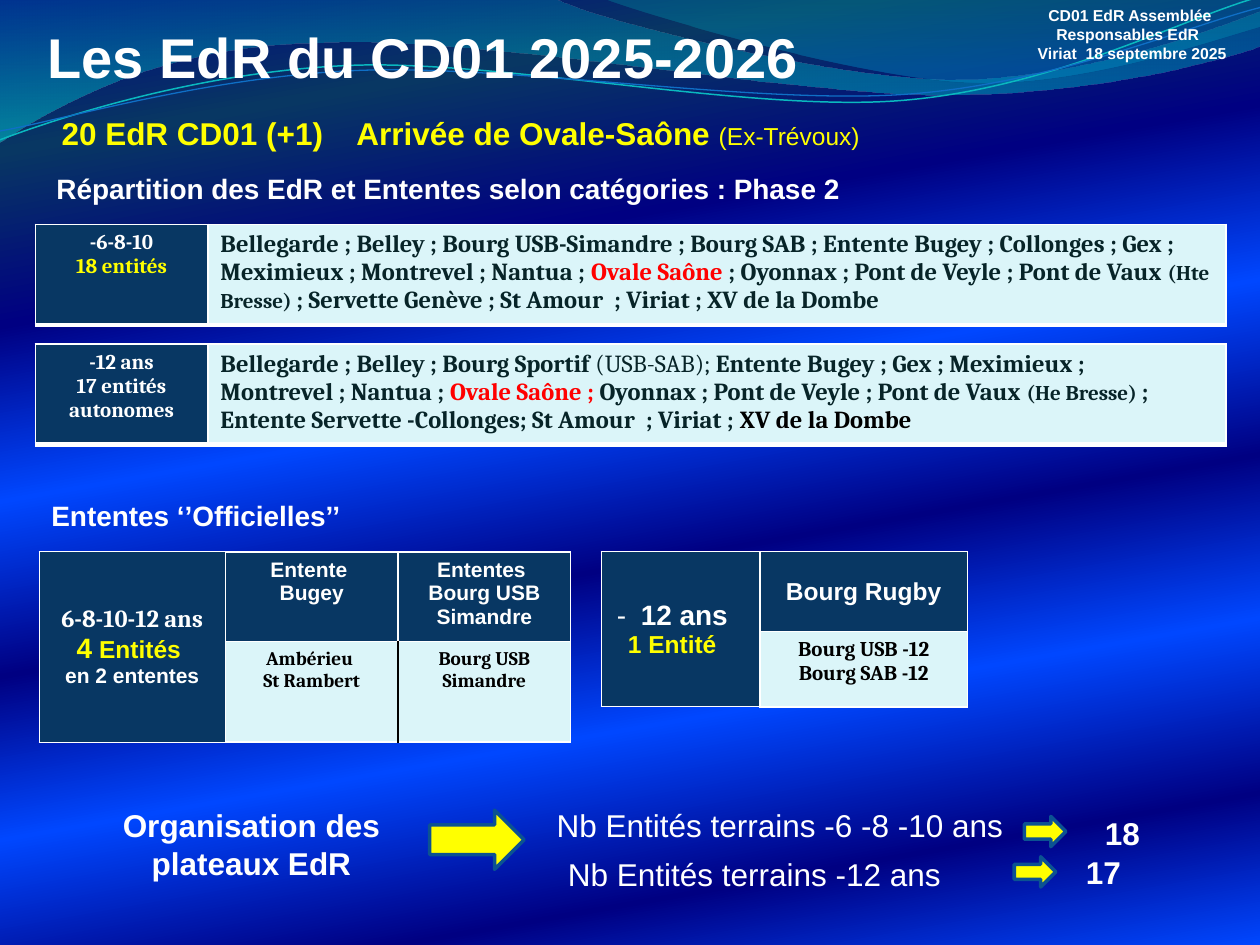
from lxml import etree
from pptx import Presentation
from pptx.dml.color import RGBColor
from pptx.enum.shapes import MSO_SHAPE
from pptx.enum.text import MSO_ANCHOR, MSO_AUTO_SIZE, PP_ALIGN
from pptx.oxml import parse_xml
from pptx.oxml.ns import nsdecls, qn
from pptx.util import Inches, Pt

CENTER, LEFT = PP_ALIGN.CENTER, PP_ALIGN.LEFT
MIDDLE, TOP = MSO_ANCHOR.MIDDLE, MSO_ANCHOR.TOP
GROW, ARROW = MSO_AUTO_SIZE.SHAPE_TO_FIT_TEXT, MSO_SHAPE.RIGHT_ARROW

WHITE, YELLOW, RED, BLACK = "FFFFFF", "FFFF00", "FF0000", "000000"
INK, NAVY, PALE, EDGE = "072428", "083763", "DBF5F9", "0B5292"
SANS, SERIF = "Arial", "Cambria"
THEME = {  # style: size, font, colour, bold
    "title": (32, SANS, WHITE, True), "lead": (18, SANS, YELLOW, True),
    "aside": (14, SANS, YELLOW, False), "heading": (16, SANS, WHITE, True),
    "tag": (9, SANS, WHITE, True), "strong": (18, SANS, WHITE, True),
    "plain": (18, SANS, WHITE, False),
    "age": (12, SERIF, WHITE, True), "count": (12, SERIF, YELLOW, True),
    "club": (14, SERIF, INK, True), "club light": (14, SERIF, INK, False),
    "club small": (12, SERIF, INK, True), "club new": (14, SERIF, RED, True),
    "club black": (14, SERIF, BLACK, True), "ages": (14, SERIF, WHITE, True),
    "four": (16, SANS, YELLOW, True), "entity": (14, SANS, YELLOW, True),
    "head": (12, SANS, WHITE, True), "head big": (14, SANS, WHITE, True),
    "member": (11, SERIF, BLACK, True), "member big": (12, SERIF, BLACK, True),
}
BACKGROUND = [(0, "000082"), (13, NAVY), (28, "000082"), (43, "0047FF"),
              (58, "000082"), (72, "0047FF"), (87, "000082"), (100, "0047FF")]

# Waves: points, where a 6-tuple is a cubic curve and a pair a straight line
BANDS = [
    ([(0, -0.01), (4.4, -0.01), (4.76, 0.17, 6.64, 0.63, 7.58, 0.63),
      (8.53, 0.63, 9.58, 0.26, 10, 0.09), (10.01, 0.36),
      (9.83, 0.44, 8.7, 0.76, 7.46, 0.75), (6.22, 0.75, 3.82, 0.28, 2.57, 0.34),
      (1.29, 0.35, 0.46, 0.83, -0.01, 1.13)],
     [(0, "0074A1", 45), (100, "00C6CF", 55)]),
    ([(4.79, -0.01), (5.09, 0.11, 6.82, 0.62, 7.69, 0.65),
      (8.56, 0.69, 9.61, 0.32, 10, 0.21), (10, 0)],
     [(0, "00A1A9", 30), (80, "008BBF", 45)]),
]
STRANDS = [
    ([(0, 1.11), (0.48, 0.93, 1.58, 0.57, 2.77, 0.52),
      (3.95, 0.47, 5.93, 0.89, 7.13, 0.8), (8.33, 0.71, 9.38, 0.15, 9.98, -0.02)],
     "0AB8BF", 0.85),
    ([(0, 1.04), (0.47, 0.96, 1.64, 0.61, 2.83, 0.56),
      (4.03, 0.51, 5.97, 0.83, 7.17, 0.75), (8.36, 0.67, 9.41, 0.21, 10, 0.06)],
     "0F6FC6", 0.75),
]

# Texts: box, alignment, paragraphs of (text, style) runs
TEXTS = [
    ((0.28, 0.13, 6.3, 0.64), LEFT, [[("Les EdR du CD01 2025-2026", "title")]]),
    ((0.39, 0.86, 2.34, 0.4), LEFT, [[("20 EdR CD01 (+1)", "lead")]]),
    ((2.73, 0.86, 5, 0.4), LEFT,
     [[("Arrivée de Ovale-Saône ", "lead"), ("(Ex-Trévoux)", "aside")]]),
    ((7.97, 0, 2.03, 0.56), CENTER,
     [[("CD01 EdR Assemblée  Responsables EdR  ", "tag")],
      [("Viriat  18 septembre 2025", "tag")]]),
    ((0.35, 1.31, 7.8, 0.37), LEFT,
     [[("Répartition des EdR et Ententes selon catégories : Phase 2", "heading")]]),
    ((0.31, 3.91, 7.8, 0.37), LEFT, [[("Ententes ‘’Officielles’’", "heading")]]),
    ((0.75, 6.35, 2.49, 0.71), CENTER, [[("Organisation des plateaux EdR", "strong")]]),
    ((4.32, 6.35, 3.88, 0.71), LEFT, [[("Nb Entités terrains -6 -8 -10 ans", "plain")]]),
    ((4.41, 6.74, 3.33, 0.4), LEFT, [[("Nb Entités terrains -12 ans", "plain")]]),
    ((8.67, 6.41, 0.67, 0.4), LEFT, [[("18", "strong")]]),
    ((8.52, 6.72, 0.67, 0.4), LEFT, [[("17", "strong")]]),
]
ARROWS = [(3.41, 6.43, 0.75, 0.47), (8.13, 6.48, 0.33, 0.24), (8.05, 6.8, 0.33, 0.24)]

# Tables: place, columns, rows, edge widths, cells, heavier sides by cell;
# cells are (fill, alignment, anchor, paragraphs); None is merged upwards
LIST_COLS, LIST_EDGES = [1.37, 8.08], {"L": 1, "R": 1, "T": 1, "B": 3}
THIN = dict.fromkeys("LRTB", 0.5)
TABLES = [
    ((0.28, 1.78), LIST_COLS, [0.8], LIST_EDGES, [[
        (NAVY, CENTER, TOP, [[("-6-8-10", "age")], [("18 entités", "count")]]),
        (PALE, LEFT, TOP, [[
            ("Bellegarde ; Belley ; Bourg USB-Simandre ; Bourg SAB ; Entente Bugey ; "
             "Collonges ; Gex ; Meximieux ; Montrevel ; Nantua ; ", "club"),
            ("Ovale Saône ", "club new"),
            ("; Oyonnax ; Pont de Veyle ; Pont de Vaux ", "club"),
            ("(Hte Bresse) ", "club small"),
            ("; Servette Genève ; St Amour  ; Viriat ; XV de la Dombe", "club")]])]], {}),
    ((0.28, 2.73), LIST_COLS, [0.8], LIST_EDGES, [[
        (NAVY, CENTER, TOP, [[("-12 ans", "age")], [("17 entités autonomes", "age")]]),
        (PALE, LEFT, TOP, [[
            ("Bellegarde ; Belley ; Bourg Sportif ", "club"),
            ("(USB-SAB); ", "club light"),
            ("Entente Bugey ; Gex ; Meximieux ; Montrevel ; Nantua ;", "club"),
            (" Ovale Saône ; ", "club new"),
            ("Oyonnax ; Pont de Veyle ; Pont de Vaux ", "club"),
            ("(He Bresse) ", "club small"),
            ("; Entente Servette -Collonges; St Amour  ; Viriat ; ", "club"),
            ("XV de la Dombe", "club black")]])]], {}),
    ((0.31, 4.38), [1.48, 1.37, 1.37], [0.71, 0.8], THIN, [
        [(NAVY, CENTER, MIDDLE, [[("6-8-10-12 ans", "ages")],
                                 [("4", "four"), (" Entités ", "entity")],
                                 [("en 2 ententes", "head")]]),
         (NAVY, CENTER, TOP, [[("Entente ", "head")], [("Bugey", "head")]]),
         (NAVY, CENTER, TOP, [[("Ententes ", "head")], [("Bourg USB Simandre", "head")]])],
        [None,
         (PALE, CENTER, TOP, [[("Ambérieu ", "member")], [("St Rambert", "member")]]),
         (PALE, CENTER, TOP, [[("Bourg USB", "member")], [("Simandre", "member")]])]],
     {(0, 1): "RTB", (0, 2): "LRTB", (1, 1): "RTB", (1, 2): "LRTB"}),
    ((4.77, 4.38), [1.26, 1.65], [0.63, 0.6], THIN, [
        [(NAVY, CENTER, MIDDLE, [[("12 ans ", "heading")], [("1 Entité", "entity")]]),
         (NAVY, CENTER, MIDDLE, [[("Bourg Rugby", "head big")]])],
        [None,
         (PALE, CENTER, TOP, [[("Bourg USB -12", "member big")],
                              [("Bourg SAB -12", "member big")]])]],
     {(0, 0): "R", (0, 1): "L", (1, 1): "LRB"}),
]


def gradient(stops, angle):
    """Gradient fill element from (percent, colour[, opacity percent]) stops."""
    marks = "".join(
        f'<a:gs pos="{pos * 1000}"><a:srgbClr val="{color}">'
        + "".join(f'<a:alpha val="{a * 1000}"/>' for a in alpha) + "</a:srgbClr></a:gs>"
        for pos, color, *alpha in stops)
    return parse_xml(f'<a:gradFill {nsdecls("a")} rotWithShape="1"><a:gsLst>{marks}</a:gsLst>'
                     f'<a:lin ang="{angle * 60000}" scaled="0"/></a:gradFill>')


def replace_fill(fill, element):
    """Put the given fill element in the place of a solid one."""
    fill.solid()
    fill._xPr.replace(fill._xPr.find(qn("a:solidFill")), element)


def wave(slide, path, close):
    """Freeform through the path's end points, its lines then bent into curves."""
    ends = [(Inches(step[-2]), Inches(step[-1])) for step in path]
    builder = slide.shapes.build_freeform(*ends[0])
    builder.add_line_segments(ends[1:], close=close)
    s = builder.convert_to_shape()
    s.shadow.inherit = False
    for line, step in zip(list(s._element.iter(qn("a:lnTo"))), path[1:]):
        if len(step) == 6:
            line.tag = qn("a:cubicBezTo")
            for i in (0, 2):
                pt = etree.Element(qn("a:pt"), x=str(Inches(step[i]) - s.left),
                                   y=str(Inches(step[i + 1]) - s.top))
                line.insert(i // 2, pt)
    return s


def write(tf, paragraphs, align):
    for i, runs in enumerate(paragraphs):
        p = tf.paragraphs[0] if i == 0 else tf.add_paragraph()
        p.alignment = align
        for text, style in runs:
            r = p.add_run()
            r.text = text
            size, r.font.name, color, r.font.bold = THEME[style]
            r.font.size = Pt(size)
            r.font.color.rgb = RGBColor.from_string(color)


def border(cell, side, width, color=WHITE):
    tcPr = cell._tc.get_or_add_tcPr()
    tag = qn(f"a:ln{side}")
    ln = tcPr.find(tag)
    if ln is None:
        ln = etree.SubElement(tcPr, tag)
    ln.set("w", str(Pt(width)))
    for child in list(ln):
        ln.remove(child)
    fill = etree.SubElement(ln, qn("a:solidFill"))
    etree.SubElement(fill, qn("a:srgbClr"), val=color)


def add_table(slide, at, cols, rows, edges, cells, heavy):
    box = [Inches(v) for v in (*at, sum(cols), sum(rows))]
    table = slide.shapes.add_table(len(rows), len(cols), *box).table
    for column, width in zip(table.columns, cols):
        column.width = Inches(width)
    for row, height in zip(table.rows, rows):
        row.height = Inches(height)
    for r, row in enumerate(cells):
        for c, content in enumerate(row):
            cell = table.cell(r, c)
            for side, width in edges.items():
                border(cell, side, 1 if side in heavy.get((r, c), "") else width)
            fill, align, anchor, paragraphs = content or (NAVY, CENTER, TOP, [])
            cell.fill.solid()
            cell.fill.fore_color.rgb = RGBColor.from_string(fill)
            cell.vertical_anchor = anchor
            write(cell.text_frame, paragraphs, align)
            if content is None:
                table.cell(r - 1, c).merge(cell)
    return table


prs = Presentation()
prs.slide_width, prs.slide_height = Inches(10), Inches(7.5)
slide = prs.slides.add_slide(prs.slide_layouts[6])
replace_fill(slide.background.fill, gradient(BACKGROUND, 80))

for path, stops in BANDS:
    s = wave(slide, path, True)
    replace_fill(s.fill, gradient(stops, 90))
    s.line.fill.background()
for path, color, width in STRANDS:
    s = wave(slide, path, False)
    s.fill.background()
    s.line.color.rgb = RGBColor.from_string(color)
    s.line.width = Pt(width)

tables = [add_table(slide, *spec) for spec in TABLES]
ententes, bourg = tables[2:]
border(ententes.cell(1, 1), "R", 1, BLACK)
border(ententes.cell(1, 2), "L", 1, BLACK)
pPr = bourg.cell(0, 0).text_frame.paragraphs[0]._p.get_or_add_pPr()
for name, inches in (("marL", 0.19), ("marR", 0.13), ("indent", -0.19)):
    pPr.set(name, str(Inches(inches)))
etree.SubElement(pPr, qn("a:buFont"), typeface=SANS)
etree.SubElement(pPr, qn("a:buChar"), char="-")

for box, align, paragraphs in TEXTS:
    tf = slide.shapes.add_textbox(*(Inches(v) for v in box)).text_frame
    tf.word_wrap, tf.auto_size = True, GROW
    write(tf, paragraphs, align)
for box in ARROWS:
    s = slide.shapes.add_shape(ARROW, *(Inches(v) for v in box))
    s.shadow.inherit = False
    s.fill.solid()
    s.fill.fore_color.rgb = RGBColor.from_string(YELLOW)
    s.line.color.rgb = RGBColor.from_string(EDGE)
    s.line.width = Pt(2)

prs.save("out.pptx")
